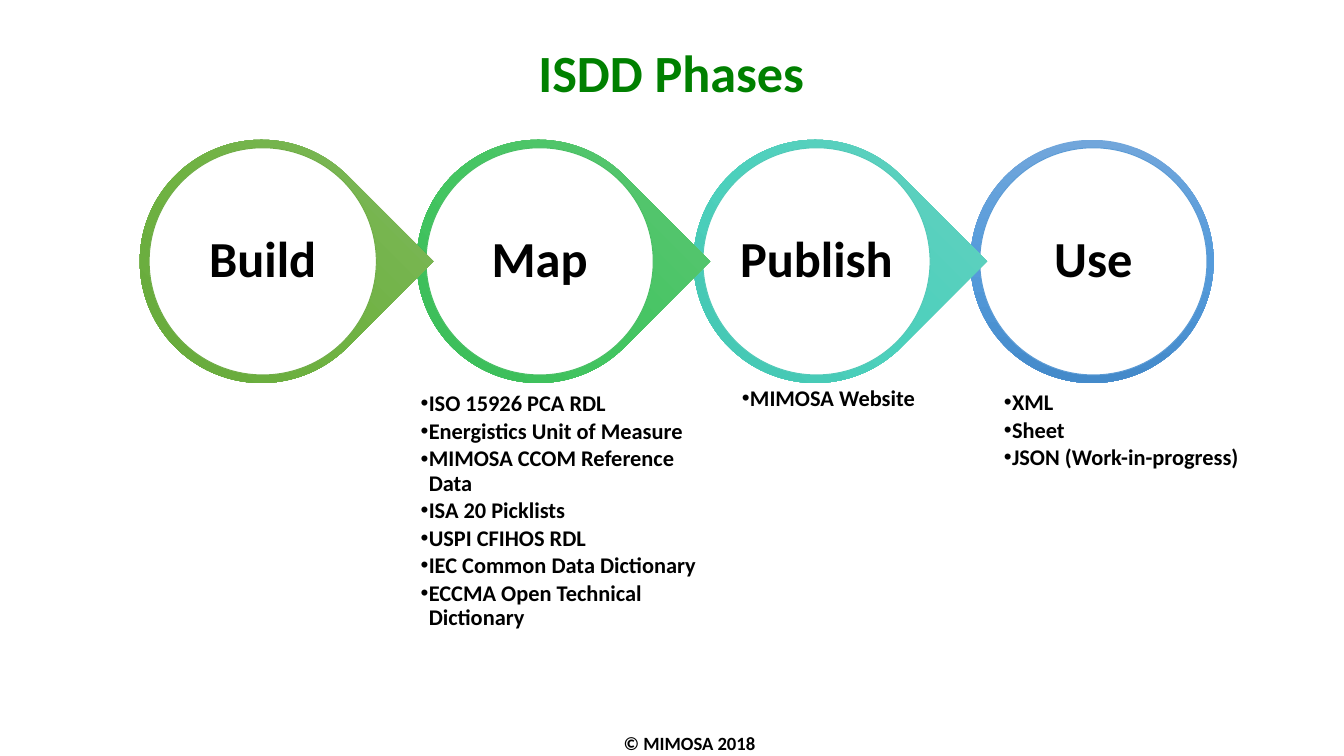
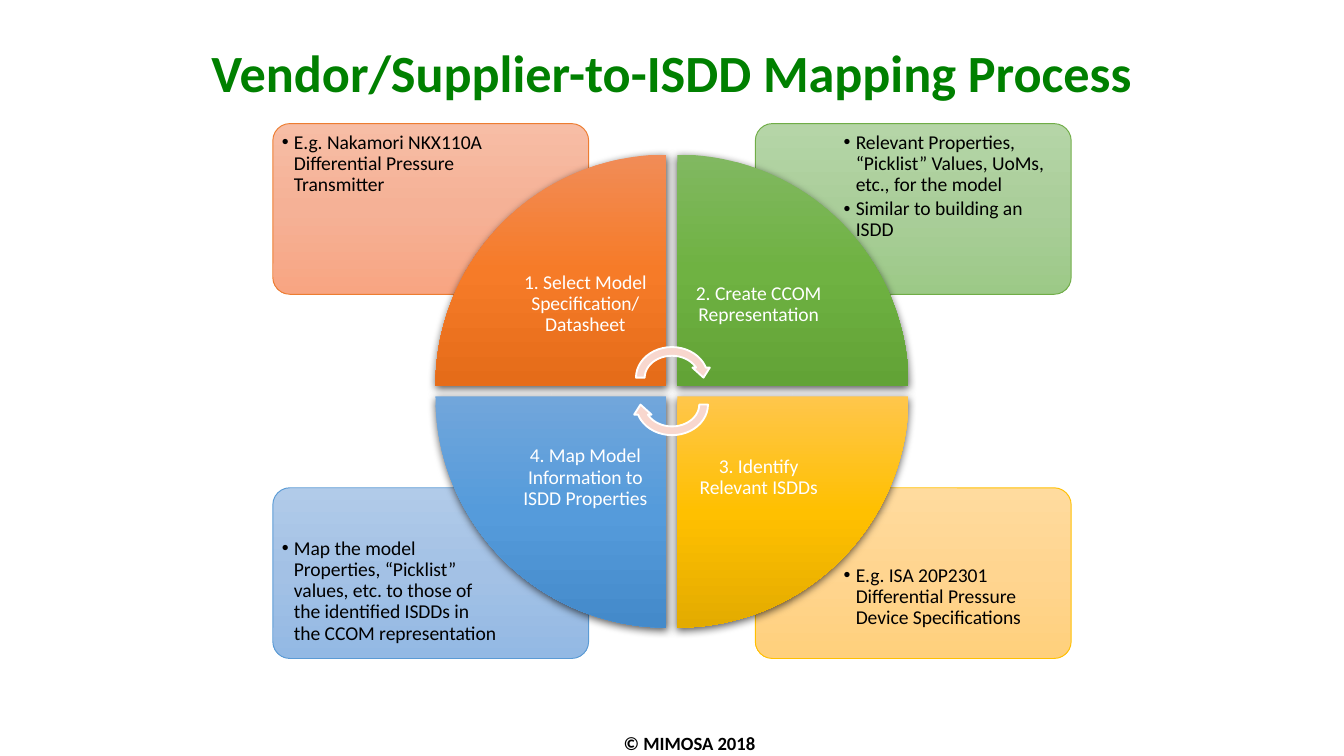
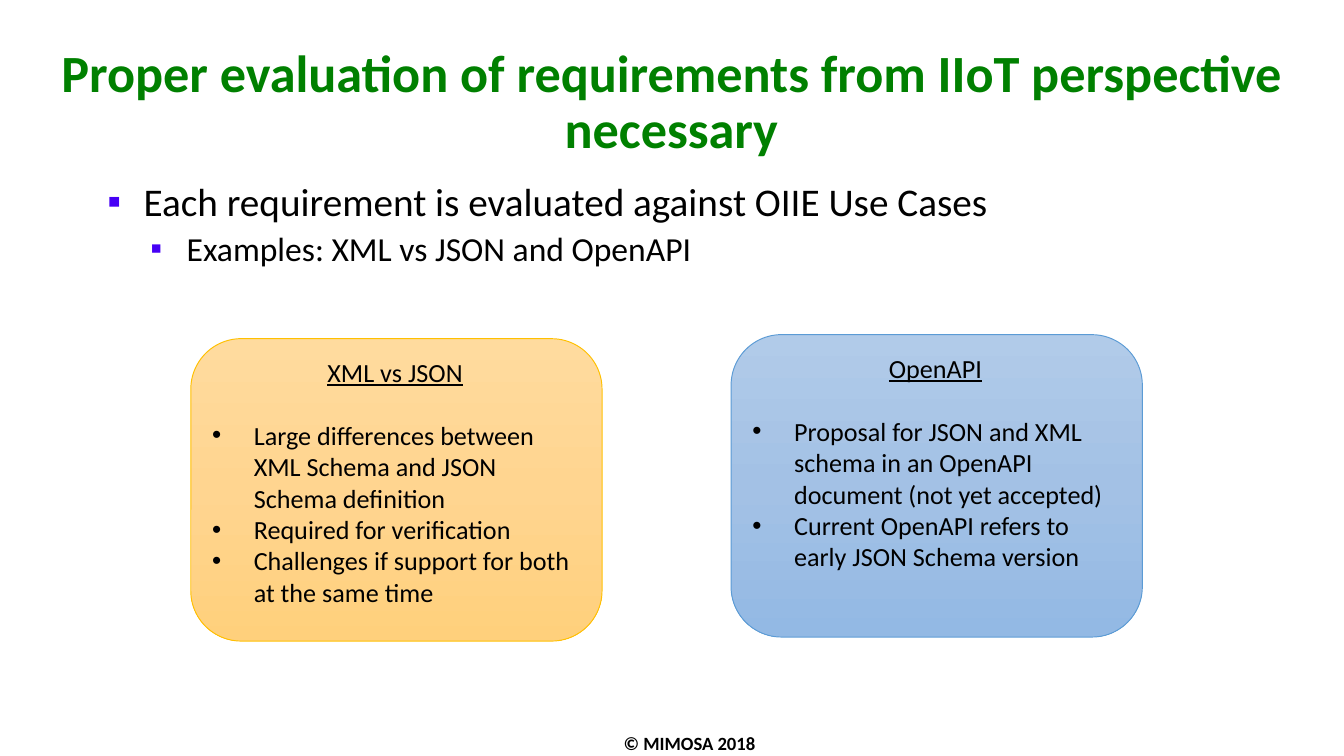
import math
import lxml.etree
import pptx
import pptx.dml.color
import pptx.enum.shapes
import pptx.enum.text
import pptx.oxml.ns
import pptx.util

Inches = pptx.util.Inches
Pt = pptx.util.Pt
KIND = pptx.enum.shapes.MSO_SHAPE
ALIGN = pptx.enum.text.PP_ALIGN
ANCHOR = pptx.enum.text.MSO_ANCHOR
FONT = "Calibri"
BLACK, WHITE, GREEN, PINK = "000000", "FFFFFF", "008000", "F8D7CE"
SIDES = ("margin_left", "margin_top", "margin_right", "margin_bottom")

RAMPS = {
    "lime": ("81B861", "6FB242", "62A336"),
    "green": ("64C678", "43C561", "35B652"),
    "teal": ("6BD1C0", "4CD0BC", "3DC0AC"),
    "blue": ("71A6DB", "559BDB", "448ACA"),
    "orange": ("F18C57", "F67B28", "E56C19"),
    "gold": ("FFC64B", "FFC000", "E3AB00"),
}
TINTS = {
    "lime": ("B5D5A7", "AACE9A", "9CC987"),
    "blue": ("B1CBE9", "A3C1E5", "93B9E4"),
    "orange": ("F7BDA5", "F5B196", "F8A582"),
    "gold": ("FFDB9E", "FFD590", "FFD07C"),
}
EDGES = {"lime": "70AD47", "green": "49BF64", "teal": "52CAB8",
         "blue": "5B9BD5", "orange": "ED7D31", "gold": "FFC000"}


def rgb(code):
    return pptx.dml.color.RGBColor.from_string(code)


def put(thing, values):
    for name, value in values.items():
        setattr(thing, name, value)


def node(parent, tag, **values):
    item = lxml.etree.SubElement(parent, pptx.oxml.ns.qn(tag))
    for name, value in values.items():
        item.set(name, str(value))
    return item


def props(shape, tag):
    return shape._element.spPr.find(pptx.oxml.ns.qn(tag))


def bullet(para, mark, indent, hang, color=None):
    pr = para._p.get_or_add_pPr()
    pr.set("marL", str(Inches(indent)))
    pr.set("indent", str(-Inches(hang)))
    if color:
        node(node(pr, "a:buClr"), "a:srgbClr", val=color)
    node(pr, "a:buFont", typeface="Arial")
    node(pr, "a:buChar", char=mark)


def write(shape, lines, size, color=BLACK, pad=None, anchor=ANCHOR.TOP,
          wrap=True, mark=None, form=None, **font):
    frame = shape.text_frame
    put(frame, {"word_wrap": wrap, "vertical_anchor": anchor})
    if pad is not None:
        put(frame, {side: Inches(gap) for side, gap in zip(SIDES, pad)})
    for i, line in enumerate(lines):
        para = frame.add_paragraph() if i or frame.text else frame.paragraphs[0]
        put(para, {"alignment": ALIGN.LEFT, **(form or {})})
        if mark:
            bullet(para, *mark)
        run = para.add_run()
        run.text = line
        put(run.font, {"name": FONT, "size": Pt(size), **font})
        run.font.color.rgb = rgb(color)


def box(slide, area):
    return slide.shapes.add_textbox(*map(Inches, area))


def paint(shape, fill, edge=None, width=0.5):
    shape.shadow.inherit = False
    if isinstance(fill, str):
        shape.fill.solid()
        shape.fill.fore_color.rgb = rgb(fill)
    else:
        shape.fill.gradient()
        shape.fill.gradient_angle = 270
        stops = props(shape, "a:gradFill").find(pptx.oxml.ns.qn("a:gsLst"))
        for stop in list(stops):
            stops.remove(stop)
        for i, code in enumerate(fill):
            node(node(stops, "a:gs", pos=i * 50000), "a:srgbClr", val=code)
    if edge:
        shape.line.color.rgb = rgb(edge)
        shape.line.width = Pt(width)
    else:
        shape.line.fill.background()


def draw(slide, kind, area, fill, edge=None, width=0.5):
    shape = slide.shapes.add_shape(kind, *map(Inches, area))
    paint(shape, fill, edge, width)
    return shape


def start(deck, title):
    slide = deck.slides.add_slide(deck.slide_layouts[6])
    mid = {"alignment": ALIGN.CENTER}
    write(box(slide, (4.17, 5.4, 1.92, 0.27)), ["© MIMOSA 2018"], 10,
          form=mid, bold=True)
    write(box(slide, (0.23, 0.3, 9.53, 0.59)), [title], 28, GREEN,
          form={**mid, "line_spacing": 0.9}, bold=True)
    return slide


def phase(slide, left, name, hue, last):
    kind = KIND.OVAL if last else KIND.TEAR
    ring = draw(slide, kind, (left, 1.04, 1.81, 1.81), RAMPS[hue])
    ring.rotation = 0 if last else 45
    disc = draw(slide, KIND.OVAL, (left + 0.07, 1.1, 1.69, 1.69), WHITE, EDGES[hue])
    write(disc, [name], 27, pad=(0, 0, 0, 0), anchor=ANCHOR.MIDDLE, wrap=False,
          form={"alignment": ALIGN.CENTER, "line_spacing": 0.9}, bold=True)


def points(slide, area, lines):
    write(box(slide, area), lines, 12, pad=(0.04,) * 4, mark=("•", 0.06, 0.06),
          form={"line_spacing": 0.9, "space_after": Pt(1.8)}, bold=True)


def note(slide, sx, sy, hue, lines, drop):
    left, top = (5.62 if sx > 0 else 2.03), (3.63 if sy > 0 else 0.92)
    card = draw(slide, KIND.ROUNDED_RECTANGLE, (left, top, 2.35, 1.27),
                TINTS[hue], EDGES[hue])
    card.adjustments[0] = 0.1
    across = (0.62, 0.03) if sx > 0 else (0.03, 0.65)
    down = (0.34 + drop, 0.03) if sy > 0 else (0.03, 0.34)
    write(card, lines, 10.5, pad=(across[0], down[0], across[1], down[1]),
          mark=("•", 0.09, 0.09),
          form={"line_spacing": 0.9, "space_after": Pt(1.5)})


def wedge(slide, sx, sy, hue, name):
    x, y, reach, steps = 5 + sx * 0.04, 2.91 + sy * 0.04, 1.72, 40
    turns = [math.pi / 2 * i / steps for i in range(steps + 1)]
    arc = [(Inches(x + sx * reach * math.cos(t)), Inches(y + sy * reach * math.sin(t)))
           for t in turns]
    pen = slide.shapes.build_freeform(Inches(x), Inches(y))
    pen.add_line_segments(arc, close=True)
    part = pen.convert_to_shape()
    paint(part, RAMPS[hue])
    glow = node(props(part, "a:effectLst"), "a:outerShdw", blurRad=Pt(4.5),
                dist=Pt(1.5), dir=5400000, algn="ctr", rotWithShape=0)
    node(node(glow, "a:srgbClr", val=BLACK), "a:alpha", val=63000)
    across = (0.08, 0.59) if sx > 0 else (0.59, 0.08)
    down = (0.08, 0.59) if sy > 0 else (0.59, 0.08)
    write(part, [name], 10.5, WHITE, (across[0], down[0], across[1], down[1]),
          ANCHOR.MIDDLE, form={"alignment": ALIGN.CENTER, "line_spacing": 0.9})


def card(slide, left, top, hue, head, lines):
    draw(slide, KIND.ROUNDED_RECTANGLE, (left, top, 3.06, 2.25), TINTS[hue], EDGES[hue])
    text = box(slide, (left + 0.06, top + 0.08, 2.92, 1.99))
    write(text, [head], 14, underline=True,
          form={"alignment": ALIGN.CENTER, "space_after": Pt(17)})
    write(text, lines, 14, mark=("•", 0.31, 0.31))


def phases(deck):
    slide = start(deck, "ISDD Phases")
    steps = [("Build", "lime"), ("Map", "green"), ("Publish", "teal"), ("Use", "blue")]
    for i, (name, hue) in reversed(list(enumerate(steps))):
        phase(slide, 1.04 + 2.06 * i, name, hue, i == len(steps) - 1)
    points(slide, (3.09, 2.88, 2.19, 1.85), [
        "ISO 15926 PCA RDL", "Energistics Unit of Measure",
        "MIMOSA CCOM Reference Data", "ISA 20 Picklists", "USPI CFIHOS RDL",
        "IEC Common Data Dictionary", "ECCMA Open Technical Dictionary"])
    points(slide, (5.48, 2.84, 1.69, 0.99), ["MIMOSA Website"])
    points(slide, (7.43, 2.87, 1.89, 0.99), ["XML", "Sheet", "JSON (Work-in-progress)"])


def mapping(deck):
    slide = start(deck, "Vendor/Supplier-to-ISDD Mapping Process")
    parts = [
        (-1, -1, "orange", "1. Select Model Specification/ Datasheet",
         ["E.g. Nakamori NKX110A Differential Pressure Transmitter"], 0),
        (1, -1, "lime", "2. Create CCOM Representation",
         ["Relevant Properties, “Picklist” Values, UoMs, etc., for the model",
          "Similar to building an ISDD"], 0),
        (1, 1, "gold", "3. Identify Relevant ISDDs",
         ["E.g. ISA 20P2301 Differential Pressure Device Specifications"], 0.2),
        (-1, 1, "blue", "4. Map Model Information to ISDD Properties",
         ["Map the model Properties, “Picklist” values, etc. to those of the "
          "identified ISDDs in the CCOM representation"], 0),
    ]
    for sx, sy, hue, name, lines, drop in parts:
        note(slide, sx, sy, hue, lines, drop)
    for sx, sy, hue, name, lines, drop in parts:
        wedge(slide, sx, sy, hue, name)
    for top, turn in ((2.55, 0), (2.75, 180)):
        arrow = draw(slide, KIND.CIRCULAR_ARROW, (4.7, top, 0.6, 0.52), PINK, WHITE, 1)
        arrow.rotation = turn


def needs(deck):
    slide = start(deck, "Proper evaluation of requirements from IIoT perspective necessary")
    body = box(slide, (0.69, 1.31, 8.62, 4.03))
    write(body, ["Each requirement is evaluated against OIIE Use Cases"], 21,
          mark=("▪", 0.28, 0.27, "4600F5"), form={"line_spacing": 0.9})
    write(body, ["Examples: XML vs JSON and OpenAPI"], 18,
          mark=("▪", 0.6, 0.27, "4600F5"),
          form={"level": 1, "line_spacing": 0.9, "space_before": Pt(3.8)})
    card(slide, 1.42, 2.52, "gold", "XML vs JSON", [
        "Large differences between XML Schema and JSON Schema definition",
        "Required for verification",
        "Challenges if support for both at the same time"])
    card(slide, 5.44, 2.49, "blue", "OpenAPI", [
        "Proposal for JSON and XML schema in an OpenAPI document (not yet accepted)",
        "Current OpenAPI refers to early JSON Schema version"])


def main():
    deck = pptx.Presentation()
    wide = Inches(10)
    put(deck, {"slide_width": wide, "slide_height": wide * 9 // 16})
    phases(deck)
    mapping(deck)
    needs(deck)
    deck.save("out.pptx")


if __name__ == "__main__":
    main()
